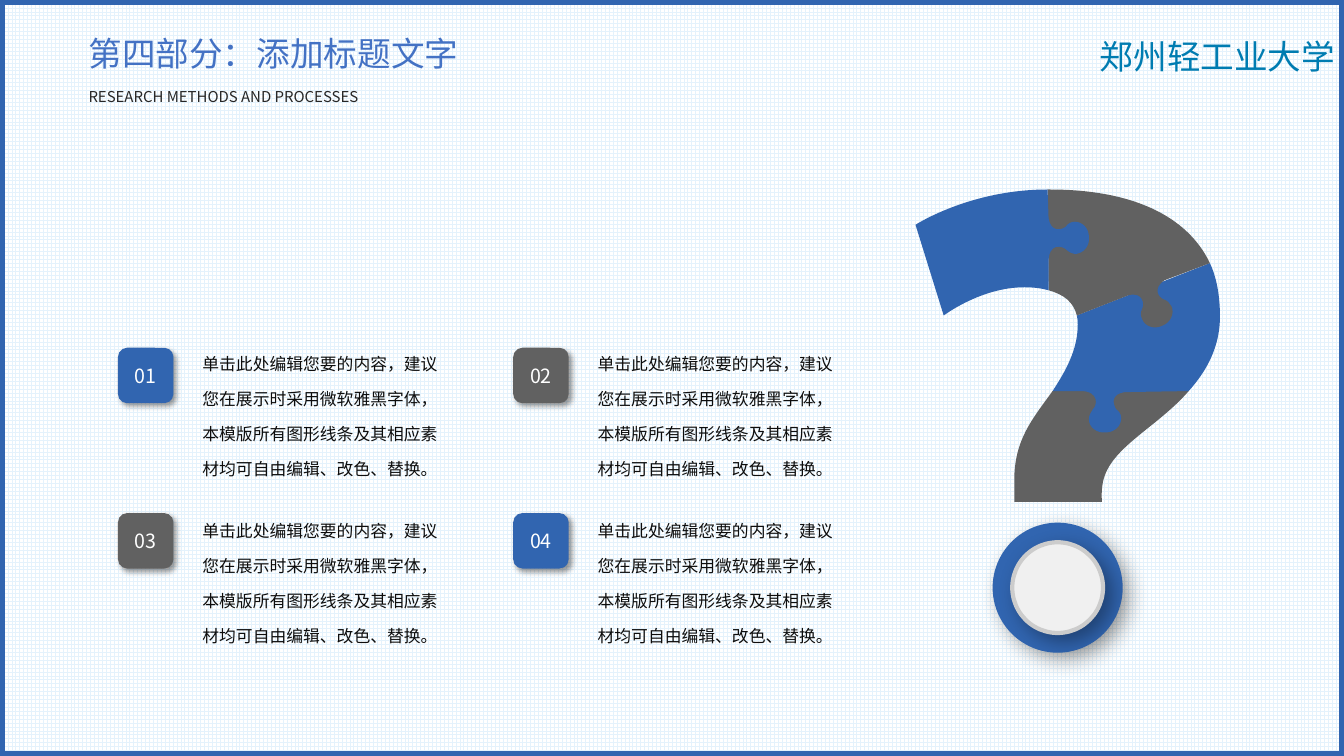
from lxml.etree import Element, SubElement
from pptx import Presentation
from pptx.dml.color import RGBColor
from pptx.enum.dml import MSO_PATTERN
from pptx.enum.shapes import MSO_SHAPE as SHAPE
from pptx.enum.text import MSO_ANCHOR as ANCHOR, MSO_AUTO_SIZE as AUTO, PP_ALIGN as ALIGN
from pptx.oxml.ns import qn
from pptx.util import Inches, Pt

BLUE, GREY = RGBColor(0x31, 0x65, 0xB0), RGBColor(0x61, 0x61, 0x61)
TITLE_BLUE, SCHOOL_BLUE = RGBColor(0x44, 0x72, 0xC4), RGBColor(0x00, 0x7C, 0xB1)
INK, SUBTITLE_INK = RGBColor(0x0D, 0x0D, 0x0D), RGBColor(0x26, 0x26, 0x26)
WHITE, GRID_BLUE = RGBColor(0xFF, 0xFF, 0xFF), RGBColor(0xE4, 0xF2, 0xFC)
DISC, DISC_RIM = RGBColor(0xF0, 0xF0, 0xF0), RGBColor(0xCC, 0xCC, 0xCC)
FONT = "Noto Sans CJK SC"

# Content: headings as (text, left, top, width, height, size, colour, wrap)
HEADINGS = [
    ("郑州轻工业大学", 10.81, 0.31, 4.89, 0.5, 24, SCHOOL_BLUE, True),
    ("第四部分：添加标题文字", 0.78, 0.28, 3.9, 0.5, 24, TITLE_BLUE, False),
    ("RESEARCH METHODS AND PROCESSES", 0.78, 0.82, 2.96, 0.28, 10.7, SUBTITLE_INK, False),
]
ADVICE = "单击此处编辑您要的内容，建议您在展示时采用微软雅黑字体，本模版所有图形线条及其相应素材均可自由编辑、改色、替换。"
POINTS = [("01", BLUE), ("02", GREY), ("03", GREY), ("04", BLUE)]

# Puzzle pieces of the question mark: start point, then lines (x, y)
# and Bézier curves (control 1, control 2, end)
PIECES = [
    (GREY, [(10.44, 3.88), (10.24, 4.16, 10.06, 4.36, 10.06, 4.77), (10.06, 4.98),
            (10.93, 4.98), (10.93, 4.97, 10.92, 4.88, 10.94, 4.78),
            (11.01, 4.44, 11.48, 4.24, 11.79, 3.88)]),
    (BLUE, [(12.1, 3.14), (12.1, 2.94, 12.07, 2.76, 12, 2.61), (10.68, 3.13),
            (10.69, 3.16, 10.69, 3.19, 10.69, 3.22),
            (10.69, 3.47, 10.57, 3.68, 10.44, 3.88), (10.72, 3.88),
            (10.91, 3.88, 10.88, 4.03, 10.84, 4.06),
            (10.82, 4.09, 10.8, 4.12, 10.8, 4.16),
            (10.8, 4.24, 10.88, 4.3, 10.97, 4.29),
            (11.05, 4.29, 11.12, 4.23, 11.12, 4.15),
            (11.12, 4.11, 11.1, 4.08, 11.07, 4.06),
            (11.04, 4.01, 11.01, 3.91, 11.16, 3.89), (11.79, 3.88),
            (11.97, 3.68, 12.1, 3.44, 12.1, 3.14)]),
    (GREY, [(11.54, 2.97), (11.49, 2.95, 11.43, 2.86, 11.55, 2.78), (12, 2.61),
            (11.77, 2.13, 11.21, 1.88, 10.41, 1.88), (10.39, 1.88), (10.4, 2.88),
            (10.55, 2.92, 10.65, 3, 10.68, 3.13), (11.19, 2.93),
            (11.34, 2.89, 11.35, 3.02, 11.33, 3.06),
            (11.31, 3.1, 11.31, 3.13, 11.33, 3.17),
            (11.36, 3.24, 11.45, 3.27, 11.53, 3.23),
            (11.61, 3.2, 11.65, 3.11, 11.62, 3.04),
            (11.6, 3.01, 11.58, 2.98, 11.54, 2.97)]),
    (BLUE, [(10.66, 2.2), (10.62, 2.2, 10.59, 2.22, 10.57, 2.25),
            (10.53, 2.28, 10.42, 2.31, 10.4, 2.16), (10.39, 1.88),
            (9.62, 1.88, 9.08, 2.23, 9.08, 2.23), (9.36, 3.13),
            (9.36, 3.13, 9.73, 2.85, 10.16, 2.85),
            (10.25, 2.85, 10.33, 2.86, 10.4, 2.88), (10.4, 2.6),
            (10.4, 2.4, 10.54, 2.44, 10.58, 2.48),
            (10.6, 2.5, 10.64, 2.52, 10.67, 2.52),
            (10.75, 2.51, 10.81, 2.44, 10.8, 2.35),
            (10.8, 2.27, 10.74, 2.2, 10.66, 2.2)]),
]
UNITS = 100  # outline units per inch
DOT_CENTRE = (10.49, 5.83)
DOT_RINGS = [(1.29, BLUE, None), (0.9, DISC, DISC_RIM)]  # diameter, fill, rim

# Grid of the four points
COLUMNS, COLUMN_STEP = 2, 3.92
TILE, TILE_LEFT, TILE_TOP, TILE_STEP = 0.55, 1.17, 3.45, 1.64
ADVICE_LEFT, ADVICE_TOP, ADVICE_STEP = 1.91, 3.31, 1.66
ADVICE_SIZE = (2.57, 1.46)

deck = Presentation()
deck.slide_width, deck.slide_height = Inches(13.33), Inches(7.5)
slide = deck.slides.add_slide(deck.slide_layouts[6])
shapes = slide.shapes


def inches(*lengths):
    return [Inches(length) for length in lengths]


def write(frame, text, size, colour, **layout):
    paragraph = frame.paragraphs[0]
    for name, value in layout.items():
        setattr(paragraph, name, value)
    run = paragraph.add_run()
    run.text = text
    for name, value in {"size": Pt(size), "name": FONT}.items():
        setattr(run.font, name, value)
    run.font.color.rgb = colour
    SubElement(run.font._element, qn("a:ea"), typeface=FONT)


def add_text(text, box, size, colour, wrap, **layout):
    frame = shapes.add_textbox(*inches(*box)).text_frame
    frame.word_wrap, frame.auto_size = wrap, AUTO.SHAPE_TO_FIT_TEXT
    write(frame, text, size, colour, **layout)


def paint(shape, fill, rim=None, rim_width=3):
    shape.shadow.inherit = False
    if fill is None:
        shape.fill.background()
    else:
        shape.fill.solid()
        shape.fill.fore_color.rgb = fill
    if rim is None:
        shape.line.fill.background()
    else:
        shape.line.color.rgb, shape.line.width = rim, Pt(rim_width)


def cast_shadow(shape, opacity, blur, distance):
    effects = shape._element.spPr.find(qn("a:effectLst"))
    shadow = SubElement(effects, qn("a:outerShdw"), blurRad=str(Pt(blur)),
                        dist=str(Pt(distance)), dir=str(45 * 60000),
                        algn="tl", rotWithShape="0")
    black = SubElement(shadow, qn("a:srgbClr"), val="000000")
    SubElement(black, qn("a:alpha"), val=str(opacity * 1000))


def add_piece(segments):
    """Draw the outline through the end points, then bend the curved sides."""
    segments = [[round(length * UNITS) for length in segment] for segment in segments]
    ends = [segment[-2:] for segment in segments]
    left, top = (min(axis) for axis in zip(*ends))
    outline = shapes.build_freeform(*ends[0], scale=Inches(1) / UNITS)
    outline.add_line_segments(ends[1:], close=True)
    piece = outline.convert_to_shape()
    sides = list(piece._element.iter(qn("a:lnTo")))
    for side, segment in zip(sides, segments[1:]):
        if len(segment) == 6:
            side.tag = qn("a:cubicBezTo")
            for place in (0, 1):
                x, y = segment[2 * place:2 * place + 2]
                side.insert(place, Element(qn("a:pt"), x=str(x - left), y=str(y - top)))
    return piece


# Background grid
paper = slide.background.fill
paper.patterned()
paper.pattern = MSO_PATTERN.LARGE_GRID
paper.fore_color.rgb, paper.back_color.rgb = GRID_BLUE, WHITE

# Headings and frame
for text, left, top, width, height, size, colour, wrap in HEADINGS:
    add_text(text, (left, top, width, height), size, colour, wrap)
border = shapes.add_shape(SHAPE.RECTANGLE, 0, 0, deck.slide_width, deck.slide_height)
paint(border, None, BLUE, 6.75)

# Question mark
for colour, segments in PIECES:
    paint(add_piece(segments), colour)
for diameter, fill, rim in DOT_RINGS:
    corner = [centre - diameter / 2 for centre in DOT_CENTRE]
    ring = shapes.add_shape(SHAPE.OVAL, *inches(*corner, diameter, diameter))
    paint(ring, fill, rim)
    cast_shadow(ring, 35, 15, 7)

# Numbered points
for index, (number, colour) in enumerate(POINTS):
    row, column = divmod(index, COLUMNS)
    shift = column * COLUMN_STEP
    add_text(ADVICE, (ADVICE_LEFT + shift, ADVICE_TOP + row * ADVICE_STEP, *ADVICE_SIZE),
             12, INK, wrap=True, line_spacing=Pt(25))
    tile = shapes.add_shape(SHAPE.ROUNDED_RECTANGLE, *inches(
        TILE_LEFT + shift, TILE_TOP + row * TILE_STEP, TILE, TILE))
    paint(tile, colour)
    cast_shadow(tile, 40, 4, 3)
    tile.text_frame.vertical_anchor = ANCHOR.MIDDLE
    write(tile.text_frame, number, 14, WHITE, alignment=ALIGN.CENTER)

deck.save("out.pptx")
